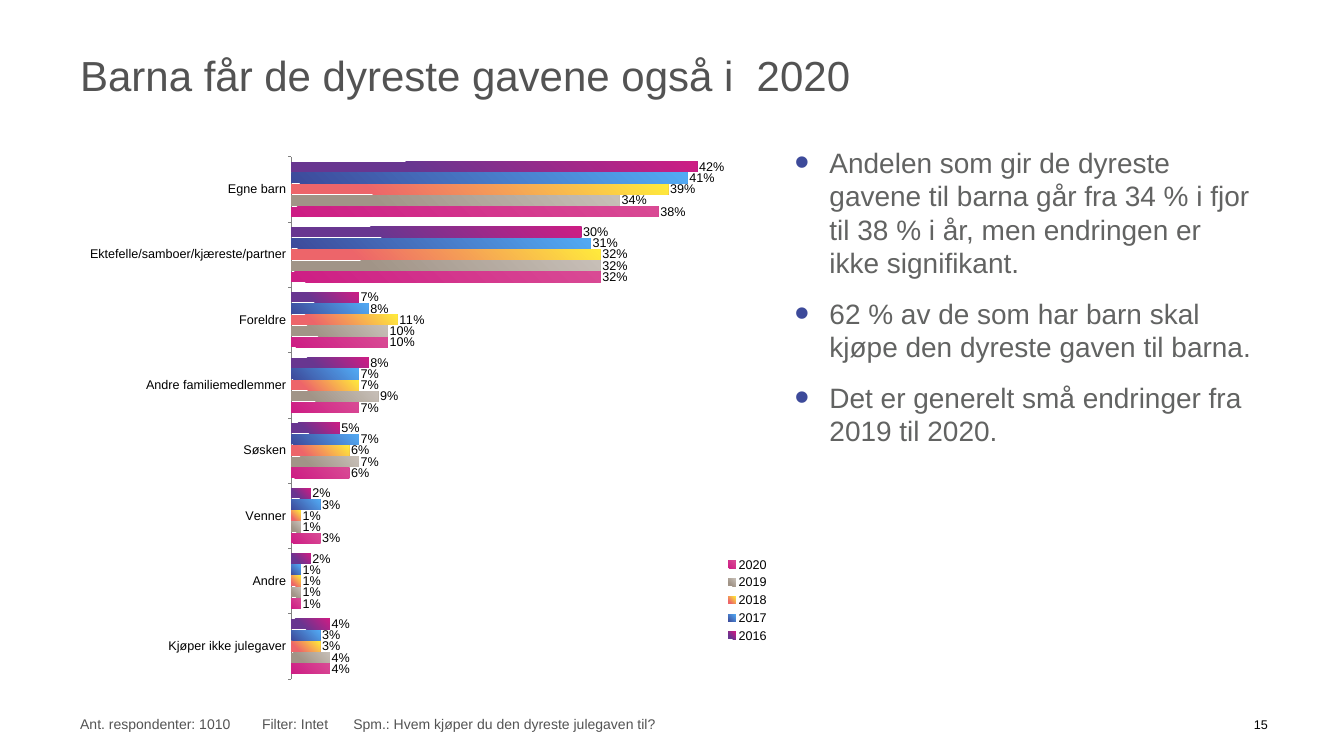
import pptx
import pptx.chart.data
import pptx.dml.color
import pptx.enum.chart
import pptx.enum.text
import pptx.oxml
import pptx.oxml.ns
import pptx.util

WIDTH, HEIGHT = pptx.util.Inches(26.67), pptx.util.Inches(15)
FONT = "Arial"
COLORS = {"heading": "535353", "body": "626362", "bullet": "3D4A9A",
          "black": "000000", "axis": "808080"}

# Regions in percent of the slide: left, top, width, height
REGIONS = {
    "title": (5.74, 3.13, 88.71, 13.6),
    "number": (93.03, 94.4, 1.57, 2.8),
    "findings": (58.76, 18.87, 35.06, 71.93),
    "chart": (5.74, 19.27, 53.06, 72),
    "footer": (5.74, 92.87, 88.71, 5.8),
}
FINDINGS = [
    "Andelen som gir de dyreste gavene til barna går fra 34 % i fjor til 38 % i år, "
    "men endringen er ikke signifikant.",
    "62 % av de som har barn skal kjøpe den dyreste gaven til barna.",
    "Det er generelt små endringer fra 2019 til 2020.",
]
RECEIVERS = ["Egne barn", "Ektefelle/samboer/kjæreste/partner", "Foreldre",
             "Andre familiemedlemmer", "Søsken", "Venner", "Andre", "Kjøper ikke julegaver"]
SHARES = {
    "2016": [0.42, 0.30, 0.07, 0.08, 0.05, 0.02, 0.02, 0.04],
    "2017": [0.41, 0.31, 0.08, 0.07, 0.07, 0.03, 0.01, 0.03],
    "2018": [0.39, 0.32, 0.11, 0.07, 0.06, 0.01, 0.01, 0.03],
    "2019": [0.34, 0.32, 0.10, 0.09, 0.07, 0.01, 0.01, 0.04],
    "2020": [0.38, 0.32, 0.10, 0.07, 0.06, 0.03, 0.01, 0.04],
}
GRADIENTS = {
    "2016": [(0, "CD1D84"), (70, "683690"), (100, "683690")],
    "2017": [(0, "52AAF4"), (100, "3D4A9A")],
    "2018": [(0, "FFEA3C"), (79, "ED656A"), (100, "ED656A")],
    "2019": [(0, "C7BFB7"), (75, "A19487"), (100, "A19487")],
    "2020": [(0, "D94A94"), (100, "CD1D84")],
}


def apply(target, values):
    for name, value in values.items():
        setattr(target, name, value)


def style_font(font, size, color):
    apply(font, {"name": FONT, "size": pptx.util.Pt(size)})
    font.color.rgb = pptx.dml.color.RGBColor.from_string(COLORS[color])


def element(xml, *prefixes):
    """Parse XML whose root is given the namespaces of the prefixes."""
    head, tail = xml.split(">", 1)
    slash = "/" if head.endswith("/") else ""
    return pptx.oxml.parse_xml(
        f"{head.rstrip('/')} {pptx.oxml.ns.nsdecls(*prefixes)}{slash}>{tail}")


def region_box(region):
    left, top, width, height = region
    return (int(WIDTH * left / 100), int(HEIGHT * top / 100),
            int(WIDTH * width / 100), int(HEIGHT * height / 100))


def add_text(page, region, texts, size, color, inset=0.06, **frame_format):
    box = page.shapes.add_textbox(*region_box(region))
    frame = box.text_frame
    if inset is not None:
        sides = ("margin_left", "margin_top", "margin_right", "margin_bottom")
        apply(frame, dict.fromkeys(sides, pptx.util.Inches(inset)))
    apply(frame, {"word_wrap": True, **frame_format})
    for index, text in enumerate(texts):
        para = frame.add_paragraph() if index else frame.paragraphs[0]
        span = para.add_run()
        span.text = text
        style_font(span.font, size, color)
    return frame.paragraphs


def add_title(page, region):
    add_text(page, region, ["Barna får de dyreste gavene også i  2020"], 60, "heading",
             vertical_anchor=pptx.enum.text.MSO_ANCHOR.MIDDLE)


def add_page_number(page, region):
    para = add_text(page, region, ["15"], 18, "black", word_wrap=False)[0]
    para.alignment = pptx.enum.text.PP_ALIGN.CENTER


def add_footer(page, region):
    text = ("Ant. respondenter: 1010\tFilter: Intet\t"
            "Spm.: Hvem kjøper du den dyreste julegaven til?")
    para = add_text(page, region, [text], 20, "heading",
                    vertical_anchor=pptx.enum.text.MSO_ANCHOR.MIDDLE)[0]
    stops = "".join(f'<a:tab pos="{pptx.util.Inches(stop)}" algn="l"/>' for stop in (3.61, 5.42))
    para._p.get_or_add_pPr().append(element(f"<a:tabLst>{stops}</a:tabLst>", "a"))


def add_findings(page, region):
    indent = pptx.util.Inches(0.69)
    for index, para in enumerate(add_text(page, region, FINDINGS, 40, "body", inset=None)):
        properties = para._p.get_or_add_pPr()
        for name, value in {"marL": indent, "indent": -indent}.items():
            properties.set(name, str(value))
        for xml in (f'<a:buClr><a:srgbClr val="{COLORS["bullet"]}"/></a:buClr>',
                    '<a:buSzPct val="150000"/>',
                    f'<a:buFont typeface="{FONT}"/>',
                    '<a:buChar char="•"/>'):
            properties.append(element(xml, "a"))
        apply(para, {"space_before": pptx.util.Pt(18 if index else 0),
                     "space_after": pptx.util.Pt(6)})


def chart_layout(left, top, width, height, inner=False):
    """Manual layout in shares of the chart."""
    target = '<c:layoutTarget val="inner"/>' if inner else ""
    return element(
        f'<c:layout><c:manualLayout>{target}<c:xMode val="edge"/><c:yMode val="edge"/>'
        f'<c:x val="{left}"/><c:y val="{top}"/><c:w val="{width}"/><c:h val="{height}"/>'
        "</c:manualLayout></c:layout>", "c")


def fill_gradient(series, stops):
    marks = "".join(f'<a:gs pos="{position * 1000}"><a:srgbClr val="{color}"/></a:gs>'
                    for position, color in stops)
    series._element.get_or_add_spPr().append(element(
        f'<a:gradFill rotWithShape="1"><a:gsLst>{marks}</a:gsLst><a:path path="circle">'
        '<a:fillToRect l="100000" b="100000"/></a:path></a:gradFill>', "a"))


def add_gift_chart(page, region):
    kinds = pptx.enum.chart
    data = pptx.chart.data.CategoryChartData(number_format="0%")
    data.categories = RECEIVERS
    for year, shares in SHARES.items():
        data.add_series(year, shares)
    chart = page.shapes.add_chart(
        kinds.XL_CHART_TYPE.BAR_CLUSTERED, *region_box(region), data).chart
    apply(chart, {"has_title": False, "has_legend": True})
    style_font(chart.font, 18, "black")

    apply(chart.category_axis, {
        "reverse_order": True, "has_major_gridlines": False,
        "major_tick_mark": kinds.XL_TICK_MARK.OUTSIDE,
        "minor_tick_mark": kinds.XL_TICK_MARK.NONE})
    line = chart.category_axis.format.line
    line.color.rgb = pptx.dml.color.RGBColor.from_string(COLORS["axis"])
    apply(chart.value_axis, {"visible": False, "has_major_gridlines": False,
                             "minimum_scale": 0, "maximum_scale": 0.45})

    plot = chart.plots[0]
    apply(plot, {"gap_width": 100, "overlap": -10, "vary_by_categories": False})
    for series in plot.series:
        fill_gradient(series, GRADIENTS[series.name])
        apply(series.data_labels, {
            "show_value": True, "number_format": "0%", "number_format_is_linked": False,
            "position": kinds.XL_LABEL_POSITION.OUTSIDE_END})
        style_font(series.data_labels.font, 18, "black")

    apply(chart.legend, {"position": kinds.XL_LEGEND_POSITION.RIGHT,
                         "include_in_layout": False})
    style_font(chart.legend.font, 18, "black")
    area = chart._chartSpace.find(".//" + pptx.oxml.ns.qn("c:plotArea"))
    legend = chart.legend._element
    for parent in (area, legend):
        for layout in parent.findall(pptx.oxml.ns.qn("c:layout")):
            parent.remove(layout)
    area.insert(0, chart_layout(0.3, 0.02, 0.61, 0.96, inner=True))
    legend.find(pptx.oxml.ns.qn("c:overlay")).addprevious(chart_layout(0.9, 0.75, 0.08, 0.17))


def main():
    deck = pptx.Presentation()
    apply(deck, {"slide_width": WIDTH, "slide_height": HEIGHT})
    page = deck.slides.add_slide(deck.slide_layouts[6])
    builders = {"title": add_title, "number": add_page_number, "findings": add_findings,
                "chart": add_gift_chart, "footer": add_footer}
    for name, build in builders.items():
        build(page, REGIONS[name])
    deck.save("out.pptx")


if __name__ == "__main__":
    main()
